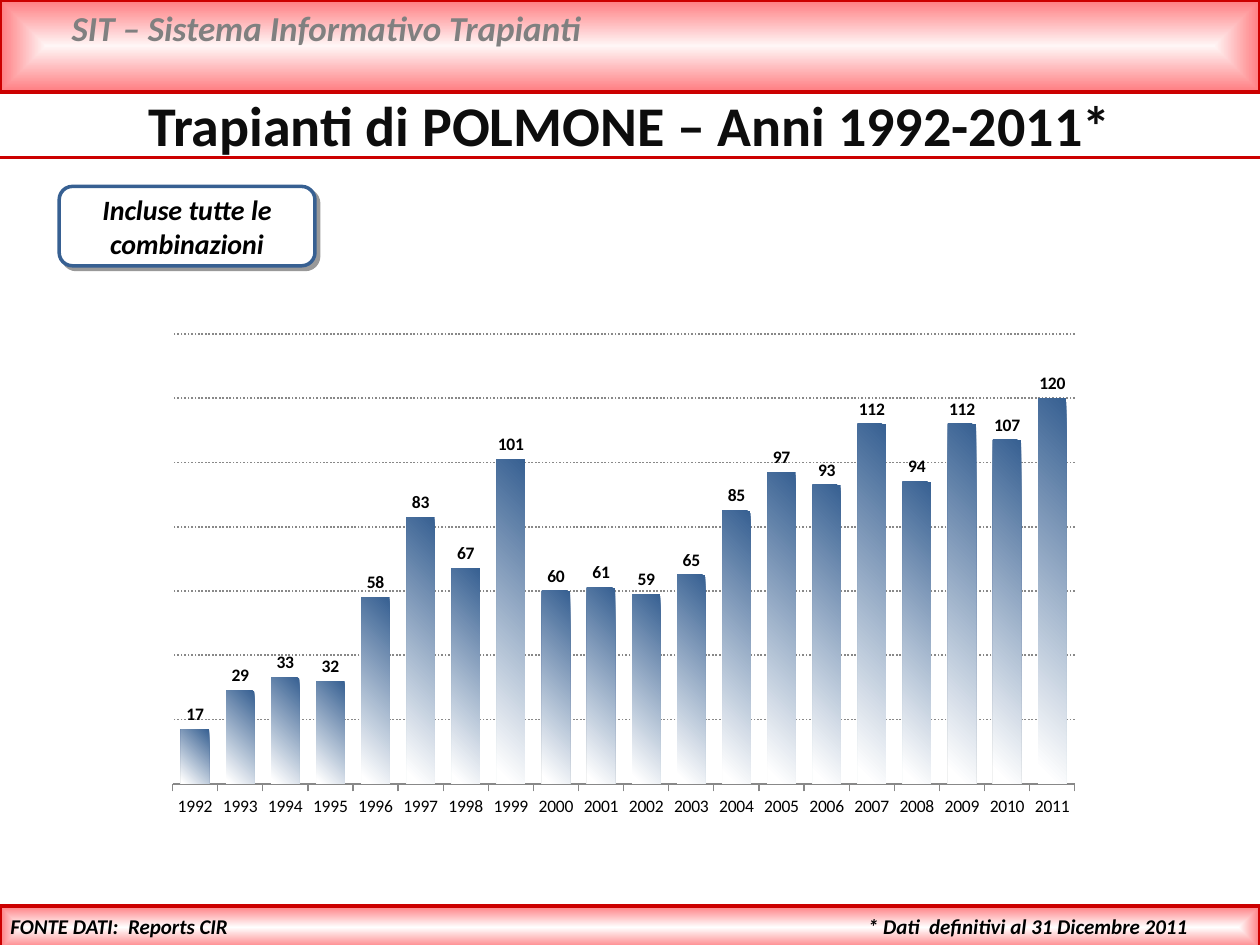
from lxml.etree import SubElement
from pptx import Presentation
from pptx.chart.data import CategoryChartData
from pptx.dml.color import RGBColor
from pptx.enum.chart import XL_CHART_TYPE, XL_LABEL_POSITION, XL_TICK_MARK
from pptx.enum.dml import MSO_LINE
from pptx.enum.shapes import MSO_CONNECTOR, MSO_SHAPE
from pptx.enum.text import PP_ALIGN
from pptx.oxml import parse_xml
from pptx.oxml.ns import nsdecls, qn
from pptx.util import Inches, Pt

FONT = "Calibri"
COLORS = {
    "red": "CC0000", "rose": "FF7C80", "pale": "FFF6F6", "white": "FFFFFF",
    "blue": "376092", "gray": "808080", "grid": "888888",
    "ink": "0D0D0D", "black": "000000",
}
YEARS = range(1992, 2012)
COUNTS = [17, 29, 33, 32, 58, 83, 67, 101, 60, 61,
          59, 65, 85, 97, 93, 112, 94, 112, 107, 120]
CENTER = ('<a:path path="shape"><a:fillToRect l="50000" t="50000" '
          'r="50000" b="50000"/></a:path>')
SLANT = '<a:lin ang="8100000" scaled="0"/>'


def color(name):
    return RGBColor.from_string(COLORS[name])


def blend(props, stops, mode):
    """Swap the solid fill in the shape properties for a gradient."""
    marks = "".join(
        f'<a:gs pos="{pos * 1000}"><a:srgbClr val="{COLORS[name]}"/></a:gs>'
        for pos, name in stops)
    grad = parse_xml(f'<a:gradFill {nsdecls("a")} rotWithShape="1">'
                     f'<a:gsLst>{marks}</a:gsLst>{mode}</a:gradFill>')
    props.replace(props.find(qn("a:solidFill")), grad)


def write(slide, box, text, size=12, ink="black", italic=True,
          align=PP_ALIGN.LEFT, wrap=True):
    frame = slide.shapes.add_textbox(*map(Inches, box)).text_frame
    frame.word_wrap = wrap
    para = frame.paragraphs[0]
    para.text = text
    para.alignment = align
    font = para.font
    font.name, font.size = FONT, Pt(size)
    font.bold, font.italic = True, italic
    font.color.rgb = color(ink)


def block(slide, box, kind, edge):
    shape = slide.shapes.add_shape(kind, *map(Inches, box))
    shape.shadow.inherit = False
    shape.fill.solid()
    shape.fill.fore_color.rgb = color("white")
    shape.line.color.rgb = color(edge)
    shape.line.width = Pt(2)
    return shape


def band(slide, box, core):
    shape = block(slide, box, MSO_SHAPE.RECTANGLE, "red")
    blend(shape._element.spPr, [(0, core), (100, "rose")], CENTER)


def header(slide, box):
    left, top, width, height = box
    band(slide, box, "pale")
    write(slide, (left + 0.47, top, width - 1.02, 0.44),
          "SIT – Sistema Informativo Trapianti", size=20, ink="gray")


def title(slide, box):
    left, top, width, height = box
    # Rule under the title
    base = Inches(top + 0.58)
    rule = slide.shapes.add_connector(
        MSO_CONNECTOR.STRAIGHT, Inches(left), base, Inches(left + width), base)
    rule.line.color.rgb = color("red")
    rule.line.width = Pt(2)
    SubElement(rule._element.spPr, qn("a:effectLst"))
    write(slide, box, "Trapianti di POLMONE – Anni 1992-2011*", size=32,
          ink="ink", italic=False, align=PP_ALIGN.CENTER)


def note(slide, box):
    shape = block(slide, box, MSO_SHAPE.ROUNDED_RECTANGLE, "blue")
    shade = parse_xml(
        f'<a:outerShdw {nsdecls("a")} blurRad="0" dist="{Pt(3)}" '
        'dir="2700000" algn="tl" rotWithShape="0">'
        f'<a:srgbClr val="{COLORS["black"]}"><a:alpha val="40000"/>'
        '</a:srgbClr></a:outerShdw>')
    shape._element.spPr.find(qn("a:effectLst")).append(shade)
    write(slide, box, "Incluse tutte le combinazioni", size=16,
          align=PP_ALIGN.CENTER)


def place(chart, **area):
    """Fix the inner plot area as fractions of the chart."""
    plot = chart._chartSpace.chart.plotArea
    for old in plot.findall(qn("c:layout")):
        plot.remove(old)
    sizes = "".join(f'<c:{key} val="{val}"/>' for key, val in area.items())
    plot.insert(0, parse_xml(
        f'<c:layout {nsdecls("c")}><c:manualLayout>'
        '<c:layoutTarget val="inner"/><c:xMode val="edge"/>'
        f'<c:yMode val="edge"/>{sizes}</c:manualLayout></c:layout>'))


def graph(slide, box):
    data = CategoryChartData()
    data.categories = [str(year) for year in YEARS]
    data.add_series("Series 1", COUNTS)
    chart = slide.shapes.add_chart(
        XL_CHART_TYPE.COLUMN_CLUSTERED, *map(Inches, box), data).chart
    chart.has_legend = chart.has_title = False
    chart.font.name, chart.font.size = FONT, Pt(10)
    chart.font.color.rgb = color("black")
    place(chart, x=0.02, y=0.02, w=0.96, h=0.9)

    # Axes
    years, scale = chart.category_axis, chart.value_axis
    years.major_tick_mark = XL_TICK_MARK.OUTSIDE
    years.format.line.color.rgb = color("grid")
    scale.visible = False
    scale.minimum_scale, scale.maximum_scale = 0, 140
    scale.major_unit = 20
    grid = scale.major_gridlines.format.line
    grid.color.rgb = color("grid")
    grid.width = Pt(1)
    grid.dash_style = MSO_LINE.ROUND_DOT

    # Bars
    plot = chart.plots[0]
    plot.vary_by_categories = False
    plot.gap_width, plot.overlap = 60, -20
    bars = plot.series[0]
    bars.format.fill.solid()
    bars.format.fill.fore_color.rgb = color("blue")
    blend(bars._element.find(qn("c:spPr")),
          [(0, "blue"), (96, "white")], SLANT)

    # Labels
    plot.has_data_labels = True
    labels = plot.data_labels
    labels.show_value = True
    labels.position = XL_LABEL_POSITION.OUTSIDE_END
    labels.font.name, labels.font.size = FONT, Pt(10)
    labels.font.bold = True
    labels.font.color.rgb = color("black")


def footer(slide, box):
    left, top, width, height = box
    band(slide, box, "white")
    write(slide, (left - 0.04, top + 0.01, 1.95, 0.3),
          "FONTE DATI:  Reports CIR", align=PP_ALIGN.RIGHT, wrap=False)
    write(slide, (left + 6.79, top + 0.01, 3.21, 0.3),
          "* Dati  definitivi al 31 Dicembre 2011")


def main():
    deck = Presentation()
    deck.slide_width, deck.slide_height = Inches(10), Inches(7.5)
    slide = deck.slides.add_slide(deck.slide_layouts[6])
    header(slide, (0, 0, 10, 0.73))
    footer(slide, (0, 7.19, 10, 0.34))
    title(slide, (0, 0.67, 10, 0.64))
    note(slide, (0.47, 1.48, 2.03, 0.63))
    graph(slide, (1.22, 2.57, 7.46, 3.97))
    deck.save("out.pptx")


if __name__ == "__main__":
    main()
